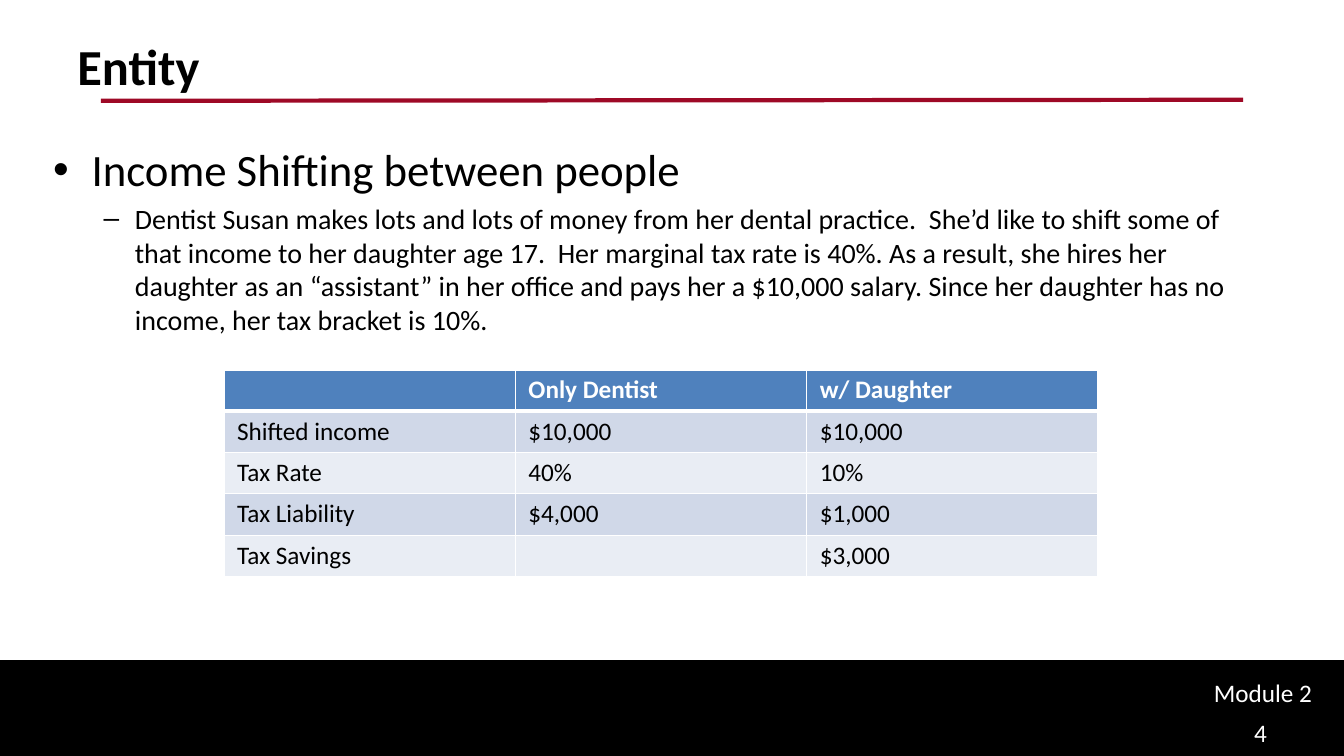
import pptx
import pptx.dml.color
import pptx.enum.shapes
import pptx.oxml.ns
import pptx.util
from lxml import etree

Inches, Pt = pptx.util.Inches, pptx.util.Pt
RGBColor = pptx.dml.color.RGBColor

TITLE = "Entity"
# text, size, left margin and hanging indent in inches, bullet, space before in points
POINTS = [
    ("Income Shifting between people", 32, 0.38, 0.38, "•", 0),
    ("Dentist Susan makes lots and lots of money from her dental practice.  "
     "She’d like to shift some of that income to her daughter age 17.  "
     "Her marginal tax rate is 40%. As a result, she hires her daughter as an "
     "“assistant” in her office and pays her a $10,000 salary. Since her daughter "
     "has no income, her tax bracket is 10%.", 20, 0.81, 0.31, "–", 4),
]
TAX_ROWS = [
    ("", "Only Dentist", "w/ Daughter"),
    ("Shifted income", "$10,000", "$10,000"),
    ("Tax Rate", "40%", "10%"),
    ("Tax Liability", "$4,000", "$1,000"),
    ("Tax Savings", "", "$3,000"),
]
MODULE, PAGE = "Module 2", "4"

FONT = "Calibri"
BLACK = RGBColor(0x00, 0x00, 0x00)
WHITE = RGBColor(0xFF, 0xFF, 0xFF)
CRIMSON = RGBColor(0x9E, 0x09, 0x26)
HEADER_BLUE = RGBColor(0x4F, 0x81, 0xBD)
BANDS = [RGBColor(0xE9, 0xED, 0xF4), RGBColor(0xD0, 0xD8, 0xE8)]

WIDTH, HEIGHT = 13.33, 7.5
FOOTER_TOP = 6.56
COLUMN, ROW = 2.89, 0.41
TABLE_LEFT, TABLE_TOP = WIDTH / 6, 3.67


def style(paragraph, size, color, bold=False):
    font = paragraph.font
    font.name, font.size, font.bold = FONT, Pt(size), bold
    font.color.rgb = color


def add_text(slide, left, top, width, height):
    frame = slide.shapes.add_textbox(
        Inches(left), Inches(top), Inches(width), Inches(height)).text_frame
    frame.word_wrap = True
    return frame


def add_line_of_text(slide, box, text, size, color, bold=False):
    paragraph = add_text(slide, *box).paragraphs[0]
    paragraph.text = text
    style(paragraph, size, color, bold)


def add_bullet(paragraph, margin, hanging, character):
    properties = paragraph._p.get_or_add_pPr()
    properties.set("marL", str(Inches(margin)))
    properties.set("indent", str(-Inches(hanging)))
    etree.SubElement(properties, pptx.oxml.ns.qn("a:buFont"), typeface="Arial")
    etree.SubElement(properties, pptx.oxml.ns.qn("a:buChar"), char=character)


def add_borders(cell, top, bottom):
    """Draw white cell borders; top and bottom are widths in points."""
    properties = cell._tc.get_or_add_tcPr()
    for side, width in (("L", 1), ("R", 1), ("T", top), ("B", bottom)):
        border = etree.SubElement(
            properties, pptx.oxml.ns.qn("a:ln" + side), w=str(Pt(width)))
        fill = etree.SubElement(border, pptx.oxml.ns.qn("a:solidFill"))
        etree.SubElement(fill, pptx.oxml.ns.qn("a:srgbClr"), val=str(WHITE))


def add_footer_band(slide):
    band = slide.shapes.add_shape(
        pptx.enum.shapes.MSO_SHAPE.RECTANGLE, 0, Inches(FOOTER_TOP),
        Inches(WIDTH), Inches(HEIGHT - FOOTER_TOP))
    band.shadow.inherit = False
    band.fill.solid()
    band.fill.fore_color.rgb = BLACK
    band.line.color.rgb = BLACK
    band.line.width = Pt(2)


def add_title_rule(slide):
    rule = slide.shapes.add_connector(
        pptx.enum.shapes.MSO_CONNECTOR.STRAIGHT,
        Inches(1), Inches(1), Inches(WIDTH - 1), Inches(0.99))
    rule.line.color.rgb = CRIMSON
    rule.line.width = Pt(3)
    etree.SubElement(rule._element.spPr, pptx.oxml.ns.qn("a:effectLst"))


def add_points(slide):
    frame = add_text(slide, 0.43, 1.36, 12.23, 4.68)
    for index, (text, size, margin, hanging, character, before) in enumerate(POINTS):
        paragraph = frame.add_paragraph() if index else frame.paragraphs[0]
        paragraph.text = text
        paragraph.level = index
        paragraph.space_before = Pt(before)
        add_bullet(paragraph, margin, hanging, character)
        style(paragraph, size, BLACK)


def add_tax_table(slide):
    rows, columns = len(TAX_ROWS), len(TAX_ROWS[0])
    table = slide.shapes.add_table(
        rows, columns, Inches(TABLE_LEFT), Inches(TABLE_TOP),
        Inches(columns * COLUMN), Inches(rows * ROW)).table
    for column in table.columns:
        column.width = Inches(COLUMN)
    for r, values in enumerate(TAX_ROWS):
        table.rows[r].height = Inches(ROW)
        header = r == 0
        for c, value in enumerate(values):
            cell = table.cell(r, c)
            cell.margin_left = cell.margin_right = Inches(0.13)
            add_borders(cell, top=3 if r == 1 else 1, bottom=3 if header else 1)
            cell.fill.solid()
            cell.fill.fore_color.rgb = HEADER_BLUE if header else BANDS[r % 2]
            paragraph = cell.text_frame.paragraphs[0]
            paragraph.text = value
            style(paragraph, 18, WHITE if header else BLACK, header)


def main():
    deck = pptx.Presentation()
    deck.slide_width, deck.slide_height = Inches(WIDTH), Inches(HEIGHT)
    slide = deck.slides.add_slide(deck.slide_layouts[6])
    add_footer_band(slide)
    add_title_rule(slide)
    add_line_of_text(slide, (0.67, 0.3, 12, 1.25), TITLE, 36, BLACK, bold=True)
    add_points(slide)
    add_line_of_text(slide, (11.94, 6.67, 1.32, 0.4), MODULE, 18, WHITE)
    add_line_of_text(slide, (12.34, 7.07, 0.91, 0.43), PAGE, 18, WHITE)
    add_tax_table(slide)
    deck.save("out.pptx")


if __name__ == "__main__":
    main()
